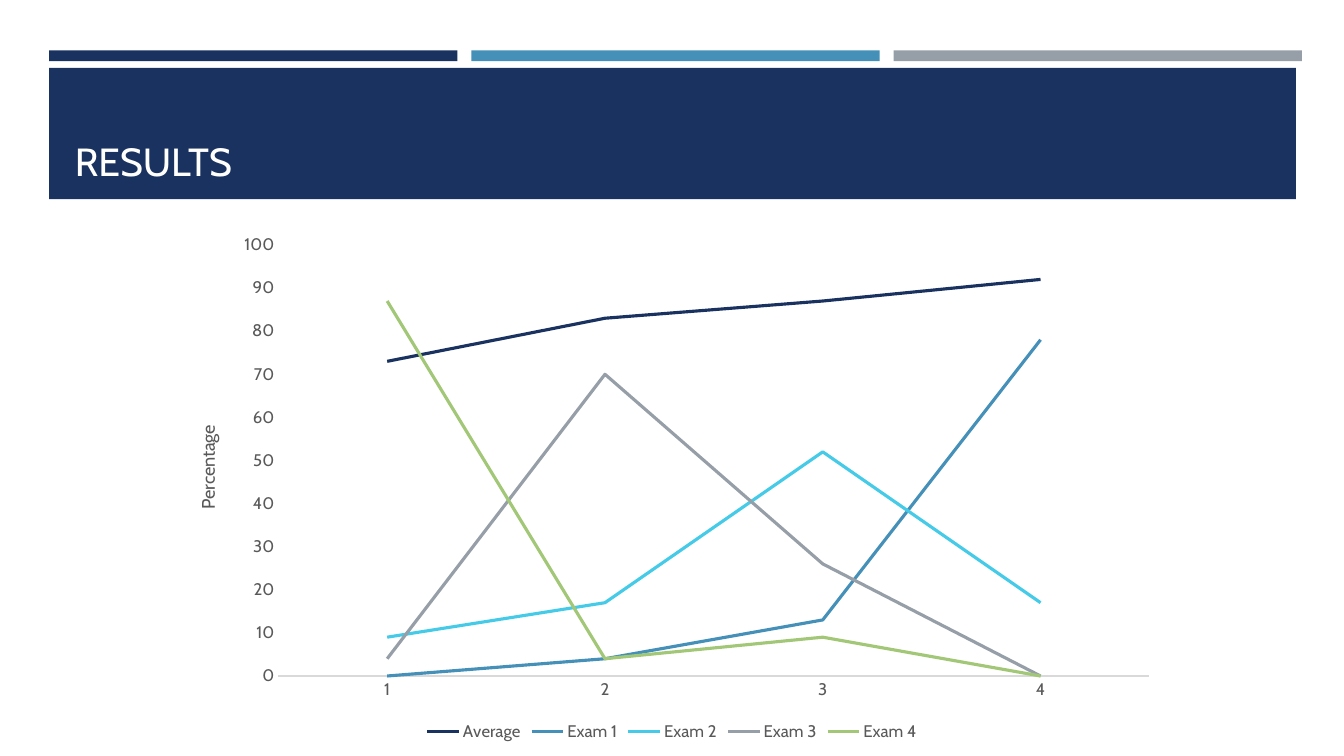
from pptx import Presentation
from pptx.chart.data import CategoryChartData
from pptx.dml.color import RGBColor
from pptx.enum.chart import XL_CHART_TYPE, XL_LEGEND_POSITION, XL_TICK_MARK
from pptx.enum.shapes import MSO_SHAPE
from pptx.enum.text import MSO_ANCHOR, PP_ALIGN
from pptx.util import Cm, Pt

RECTANGLE = MSO_SHAPE.RECTANGLE
LINE_CHART = XL_CHART_TYPE.LINE
LEGEND_BOTTOM = XL_LEGEND_POSITION.BOTTOM
NO_TICKS = XL_TICK_MARK.NONE
ANCHOR_BOTTOM = MSO_ANCHOR.BOTTOM
ALIGN_LEFT = PP_ALIGN.LEFT

FONT = "Cabin"
COLORS = {
    "navy": "1A3260",
    "blue": "4590B8",
    "cyan": "45CBE8",
    "gray": "969FA7",
    "green": "A2C777",
    "text": "595959",
    "axis": "D9D9D9",
    "white": "FFFFFF",
}


def style_font(font, size, color):
    font.name = FONT
    font.size = Pt(size)
    font.bold = False
    font.color.rgb = RGBColor.from_string(COLORS[color])


def add_bar(page, left, top, width, height, color):
    bar = page.shapes.add_shape(RECTANGLE, Cm(left), Cm(top), Cm(width), Cm(height))
    bar.shadow.inherit = False
    bar.fill.solid()
    bar.fill.fore_color.rgb = RGBColor.from_string(COLORS[color])
    bar.line.fill.background()
    return bar


deck = Presentation()
deck.slide_width = Cm(33.87)
deck.slide_height = Cm(19.05)
page = deck.slides.add_slide(deck.slide_layouts.get_by_name("Title Only"))

# Three stripes above the title band
margin, stripe_width, stripe_pitch = 1.24, 10.29, 10.64
for index, color in enumerate(["navy", "blue", "gray"]):
    add_bar(page, margin + index * stripe_pitch, 1.27, stripe_width, 0.27, color)
band = add_bar(page, margin, 1.71, 31.42, 3.31, "navy")

# Title, placed in front of its band
title = page.shapes.title
band.element.addnext(title.element)
title.left, title.top = Cm(1.63), Cm(1.96)
title.width, title.height = Cm(30.63), Cm(2.82)
title.text_frame.vertical_anchor = ANCHOR_BOTTOM
para = title.text_frame.paragraphs[0]
para.alignment = ALIGN_LEFT
span = para.add_run()
span.text = "RESULTS"
style_font(span.font, 28, "white")

# Chart data
exam_series = [
    ("Average", [73, 83, 87, 92], "navy"),
    ("Exam 1", [0, 4, 13, 78], "blue"),
    ("Exam 2", [9, 17, 52, 17], "cyan"),
    ("Exam 3", [4, 70, 26, 0], "gray"),
    ("Exam 4", [87, 4, 9, 0], "green"),
]
data = CategoryChartData()
data.categories = ["1", "2", "3", "4"]
for name, values, color in exam_series:
    data.add_series(name, values)

# Line chart
chart = page.shapes.add_chart(
    LINE_CHART, Cm(4.4), Cm(5.66), Cm(25.07), Cm(13.13), data
).chart
style_font(chart.font, 12, "text")
chart.has_title = False
chart.has_legend = True
chart.legend.position = LEGEND_BOTTOM
chart.legend.include_in_layout = False
style_font(chart.legend.font, 12, "text")

plot = chart.plots[0]
plot.vary_by_categories = False
for series, (name, values, color) in zip(plot.series, exam_series):
    series.smooth = False
    series.format.line.width = Pt(2.25)
    series.format.line.color.rgb = RGBColor.from_string(COLORS[color])

# Axes
for axis in (chart.category_axis, chart.value_axis):
    axis.has_major_gridlines = False
    axis.major_tick_mark = NO_TICKS
    axis.minor_tick_mark = NO_TICKS
    style_font(axis.tick_labels.font, 12, "text")
chart.category_axis.format.line.width = Pt(0.75)
chart.category_axis.format.line.color.rgb = RGBColor.from_string(COLORS["axis"])

value_axis = chart.value_axis
value_axis.minimum_scale = 0
value_axis.maximum_scale = 100
value_axis.major_unit = 10
value_axis.format.line.fill.background()
span = value_axis.axis_title.text_frame.paragraphs[0].add_run()
span.text = "Percentage"
style_font(span.font, 13, "text")

deck.save("out.pptx")
